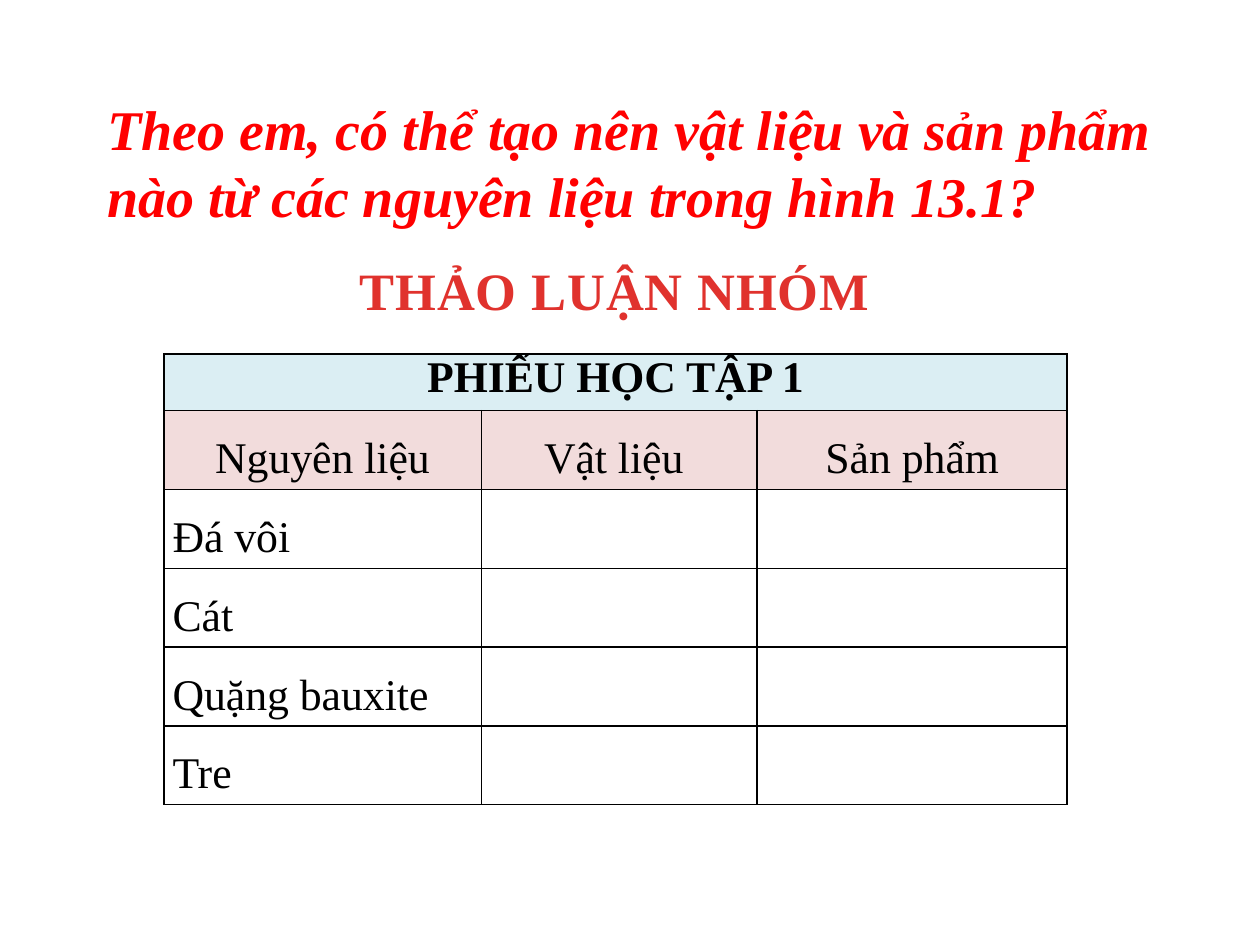
import pptx
import pptx.dml.color
import pptx.enum.text
import pptx.oxml
import pptx.oxml.ns
import pptx.util

Inches, Pt = pptx.util.Inches, pptx.util.Pt
ALIGN = pptx.enum.text.PP_ALIGN

THEME = {
    "font": "Times New Roman",
    "question": "FF0000", "activity": "E0322D", "ink": "000000",
    "sheet_fill": "DBEEF3", "header_fill": "F2DCDC",
    "question_size": 32, "activity_size": 30, "table_size": 25,
}

QUESTION = ("Theo em, có thể tạo nên vật liệu và sản phẩm nào "
            "từ các nguyên liệu trong hình 13.1?")
ACTIVITY = "THẢO LUẬN NHÓM"
SHEET_TITLE = "PHIẾU HỌC TẬP 1"
HEADERS = ["Nguyên liệu", "Vật liệu ", "Sản phẩm"]
MATERIALS = ["Đá vôi", "Cát", "Quặng bauxite", "Tre"]

COLUMN_WIDTHS = [2.52, 2.19, 2.46]
TITLE_ROW, BODY_ROW = 0.45, 0.59


def rgb(name):
    return pptx.dml.color.RGBColor.from_string(THEME[name])


def write(frame, text, size, color, align, bold=False, italic=False):
    para = frame.paragraphs[0]
    para.text = text
    para.alignment = align
    font = para.font
    font.name, font.size = THEME["font"], Pt(THEME[size])
    font.bold, font.italic = bold, italic
    font.color.rgb = rgb(color)
    return para


def add_borders(cell):
    props = cell._tc.get_or_add_tcPr()
    for index, side in enumerate(("lnL", "lnR", "lnT", "lnB")):
        props.insert(index, pptx.oxml.parse_xml(
            f'<a:{side} {pptx.oxml.ns.nsdecls("a")} w="{Pt(1)}"><a:solidFill>'
            f'<a:srgbClr val="{THEME["ink"]}"/></a:solidFill></a:{side}>'))


def add_question(page):
    title = page.shapes.title
    title.left, title.top = Inches(0.75), Inches(0.7)
    title.width, title.height = Inches(8.78), Inches(1.18)
    frame = title.text_frame
    frame.word_wrap = True
    frame.auto_size = pptx.enum.text.MSO_AUTO_SIZE.SHAPE_TO_FIT_TEXT
    frame.vertical_anchor = pptx.enum.text.MSO_ANCHOR.TOP
    write(frame, QUESTION, "question_size", "question", ALIGN.LEFT, True, True)


def add_activity(page):
    box = page.shapes.add_textbox(Inches(2.73), Inches(2), Inches(4.3), Inches(0.61))
    frame = box.text_frame
    frame.word_wrap = False
    frame.auto_size = pptx.enum.text.MSO_AUTO_SIZE.SHAPE_TO_FIT_TEXT
    para = write(frame, ACTIVITY, "activity_size", "activity", ALIGN.CENTER, True)
    para.runs[0]._r.get_or_add_rPr().set("spc", "50")


def add_worksheet(page):
    rows = [[SHEET_TITLE, "", ""], HEADERS] + [[name, "", ""] for name in MATERIALS]
    heights = [TITLE_ROW] + [BODY_ROW] * (len(rows) - 1)
    table = page.shapes.add_table(
        len(rows), len(HEADERS), Inches(1.3), Inches(2.81),
        Inches(sum(COLUMN_WIDTHS)), Inches(sum(heights))).table
    table.first_row = table.horz_banding = False
    for column, width in zip(table.columns, COLUMN_WIDTHS):
        column.width = Inches(width)
    fills = {0: "sheet_fill", 1: "header_fill"}
    for r, (texts, height) in enumerate(zip(rows, heights)):
        table.rows[r].height = Inches(height)
        for c, text in enumerate(texts):
            cell = table.cell(r, c)
            cell.margin_left = cell.margin_right = Inches(0.07)
            cell.margin_top = cell.margin_bottom = 0
            if r in fills:
                cell.fill.solid()
                cell.fill.fore_color.rgb = rgb(fills[r])
            else:
                cell.fill.background()
            add_borders(cell)
            if text:
                align = ALIGN.CENTER if r in fills else ALIGN.JUSTIFY
                para = write(cell.text_frame, text, "table_size", "ink", align, r == 0)
                if r > 0:
                    para.line_spacing = 1.5
    table.cell(0, 0).merge(table.cell(0, len(HEADERS) - 1))


def main():
    deck = pptx.Presentation()
    deck.slide_width, deck.slide_height = Inches(10), Inches(7.5)
    page = deck.slides.add_slide(deck.slide_layouts.get_by_name("Title Only"))
    add_activity(page)
    add_worksheet(page)
    add_question(page)
    deck.save("out.pptx")


if __name__ == "__main__":
    main()
